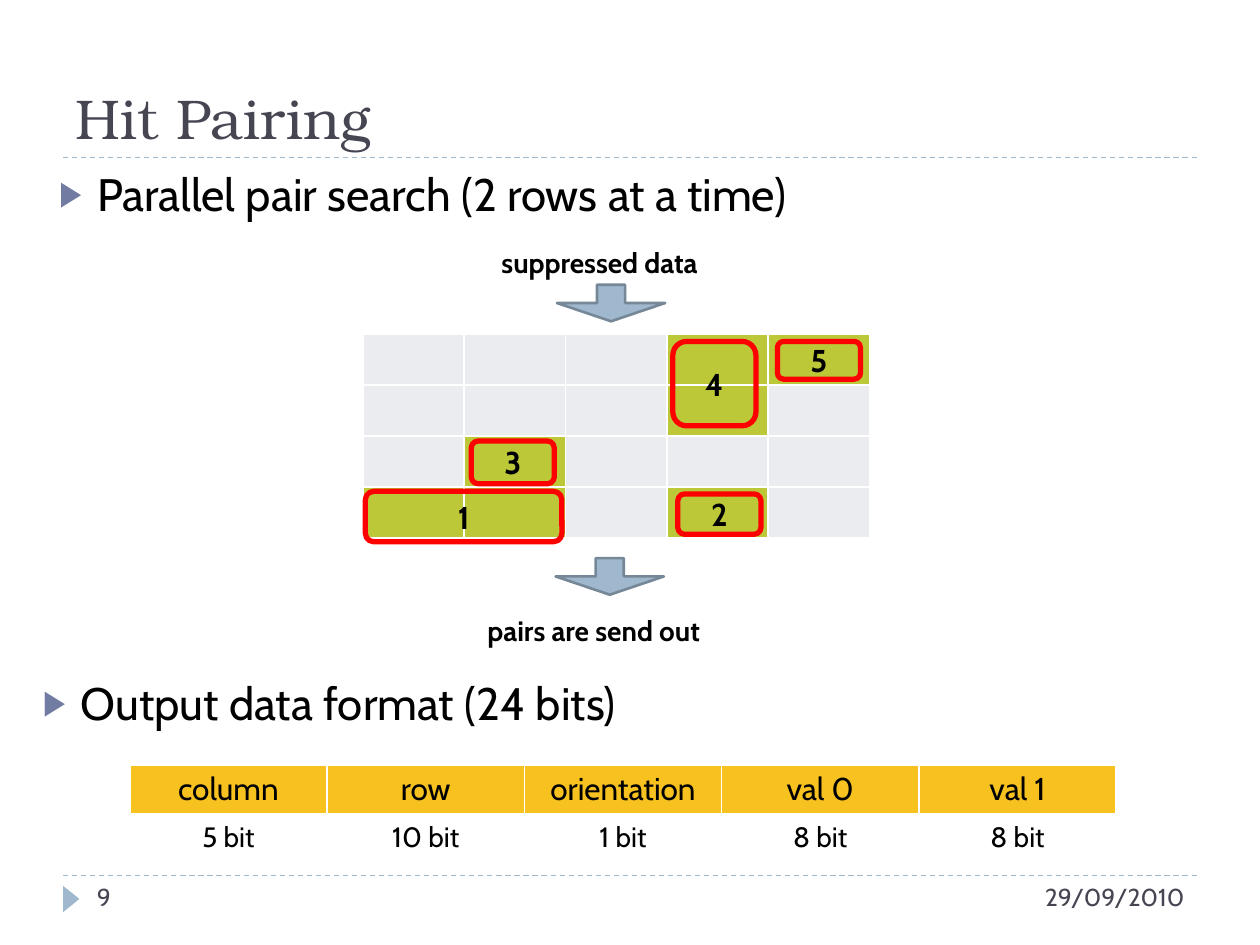
from dataclasses import dataclass

from lxml import etree
from pptx import Presentation
from pptx.dml.color import RGBColor
from pptx.enum.dml import MSO_LINE
from pptx.enum.shapes import MSO_CONNECTOR, MSO_SHAPE
from pptx.enum.text import MSO_ANCHOR, MSO_AUTO_SIZE, PP_ALIGN
from pptx.oxml.ns import qn
from pptx.util import Pt

DASH = MSO_LINE.DASH
STRAIGHT = MSO_CONNECTOR.STRAIGHT
DOWN_ARROW = MSO_SHAPE.DOWN_ARROW
ROUNDED = MSO_SHAPE.ROUNDED_RECTANGLE
TRIANGLE = MSO_SHAPE.ISOSCELES_TRIANGLE
TOP, MIDDLE, BOTTOM = MSO_ANCHOR.TOP, MSO_ANCHOR.MIDDLE, MSO_ANCHOR.BOTTOM
LEFT, CENTER, RIGHT = PP_ALIGN.LEFT, PP_ALIGN.CENTER, PP_ALIGN.RIGHT
NO_AUTOFIT = MSO_AUTO_SIZE.NONE
EMU_PER_PX = 9144


@dataclass(frozen=True)
class Theme:
    """Colours, fonts and type sizes of the slide."""
    heading_font: str = "TeX Gyre Bonum"
    body_font: str = "Cabin"
    ink: str = "000000"
    muted: str = "464653"
    accent: str = "9FB8CD"
    accent_edge: str = "768898"
    bullet: str = "727CA3"
    mark: str = "FF0000"
    hit: str = "BCC838"
    empty: str = "EBECF0"
    header: str = "F7C120"
    paper: str = "FFFFFF"
    title_size: int = 32
    bullet_size: int = 26
    label_size: int = 18
    caption_size: int = 16
    footer_size: int = 14


THEME = Theme()


def px(value):
    """Turn pixels into EMU."""
    return round(value * EMU_PER_PX)


def place(shape, box):
    """Move a shape to a box of left, top, width and height."""
    shape.left, shape.top, shape.width, shape.height = map(px, box)


def write_text(frame, text, size, font=THEME.body_font, color=THEME.ink, bold=False,
               align=LEFT, anchor=TOP, bullet=None, insets=(10, 5)):
    """Write one formatted paragraph into a text frame."""
    frame.word_wrap, frame.auto_size, frame.vertical_anchor = True, NO_AUTOFIT, anchor
    frame.margin_left = frame.margin_right = px(insets[0])
    frame.margin_top = frame.margin_bottom = px(insets[1])
    paragraph = frame.paragraphs[0]
    paragraph.alignment, paragraph.space_before = align, Pt(0)
    if bullet:
        add_bullet(paragraph, bullet)
    run = paragraph.add_run()
    run.text = text
    run.font.name, run.font.size, run.font.bold = font, Pt(size), bold
    run.font.color.rgb = RGBColor.from_string(color)


def add_bullet(paragraph, character):
    """Give a paragraph a hanging coloured bullet."""
    properties = paragraph._p.get_or_add_pPr()
    properties.set("marL", str(px(30)))
    properties.set("indent", str(px(-30)))
    color = etree.SubElement(properties, qn("a:buClr"))
    etree.SubElement(color, qn("a:srgbClr"), val=THEME.bullet)
    etree.SubElement(properties, qn("a:buSzPct"), val="76000")
    etree.SubElement(properties, qn("a:buChar"), char=character)


def add_text(slide, box, text, size, **style):
    """Add a text box."""
    write_text(slide.shapes.add_textbox(*map(px, box)).text_frame, text, size, **style)


def add_shape(slide, kind, box, fill=None, line=None, weight=0):
    """Add a flat preset shape."""
    shape = slide.shapes.add_shape(kind, *map(px, box))
    shape.shadow.inherit = False
    if fill:
        shape.fill.solid()
        shape.fill.fore_color.rgb = RGBColor.from_string(fill)
    else:
        shape.fill.background()
    if line:
        shape.line.color.rgb = RGBColor.from_string(line)
        shape.line.width = Pt(weight)
    else:
        shape.line.fill.background()
    return shape


def add_rule(slide, left, top, width):
    """Add a dashed horizontal rule."""
    rule = slide.shapes.add_connector(STRAIGHT, px(left), px(top), px(left + width), px(top))
    rule.line.color.rgb = RGBColor.from_string(THEME.accent)
    rule.line.width, rule.line.dash_style = Pt(0.75), DASH
    etree.SubElement(rule._element.spPr, qn("a:effectLst"))


def style_cell(cell, fill):
    """Give a cell white borders, a fill and tight margins."""
    properties = cell._tc.get_or_add_tcPr()
    for side in ("lnL", "lnR", "lnT", "lnB"):
        border = etree.SubElement(properties, qn(f"a:{side}"), w=str(Pt(1)))
        paint = etree.SubElement(border, qn("a:solidFill"))
        etree.SubElement(paint, qn("a:srgbClr"), val=THEME.paper)
    cell.fill.solid()
    cell.fill.fore_color.rgb = RGBColor.from_string(fill)
    cell.margin_top = cell.margin_bottom = px(2)
    cell.vertical_anchor = MIDDLE


def add_plain_table(slide, box, rows, columns):
    """Add a table with equal rows and columns and no banding."""
    table = slide.shapes.add_table(rows, columns, *map(px, box)).table
    table.first_row = table.horz_banding = False
    for row in table.rows:
        row.height = px(box[3] / rows)
    for column in table.columns:
        column.width = px(box[2] / columns)
    return table


def add_title(slide, box):
    """Fill the title placeholder and rule it off."""
    left, top, width, height = box
    place(slide.shapes.title, box)
    write_text(slide.shapes.title.text_frame, "Hit Pairing", THEME.title_size,
               font=THEME.heading_font, color=THEME.muted, anchor=BOTTOM)
    add_rule(slide, left, top + height, width)


def add_point(placeholder, box, text):
    """Fill a body placeholder with one bulleted line."""
    place(placeholder, box)
    write_text(placeholder.text_frame, text, THEME.bullet_size, bullet="▶")


def add_arrow(slide, left, top):
    """Add a wide arrow pointing down."""
    arrow = add_shape(slide, DOWN_ARROW, (left, top, 86, 29), THEME.accent,
                      THEME.accent_edge, 1.5)
    arrow.adjustments[0], arrow.adjustments[1] = 0.26, 0.5


def add_hit_grid(slide, box):
    """Draw the hit grid with its numbered pairs, arrows and captions."""
    left, top, width, height = box
    pattern = ("...##", "...#.", ".#...", "##.#.")
    table = add_plain_table(slide, box, len(pattern), len(pattern[0]))
    for row, line in enumerate(pattern):
        for column, sign in enumerate(line):
            style_cell(table.cell(row, column), THEME.hit if sign == "#" else THEME.empty)
    pairs = {"1": (2, 125, 156, 40), "3": (86, 85, 66, 34), "2": (250, 127, 66, 32),
             "4": (246, 6, 66, 67), "5": (329, 6, 66, 30)}
    for number, (across, down, pair_width, pair_height) in pairs.items():
        pair = add_shape(slide, ROUNDED, (left + across, top + down, pair_width, pair_height),
                         line=THEME.mark, weight=3)
        write_text(pair.text_frame, number, THEME.label_size, bold=True, align=CENTER,
                   anchor=MIDDLE, insets=(0, 0))
    add_arrow(slide, left + 154, top - 39)
    add_arrow(slide, left + 153, top + height + 16)
    add_text(slide, (left + 90, top - 75, 238, 37), "suppressed data",
             THEME.caption_size, bold=True, insets=(20, 5))
    add_text(slide, (left + 89, top + height + 55, 238, 37), "pairs are send out",
             THEME.caption_size, bold=True)


def add_format_table(slide, box):
    """Tabulate the output fields and their widths."""
    lines = ((("column", "row", "orientation", "val 0", "val 1"),
              THEME.label_size, THEME.header),
             (("5 bit", "10 bit", "1 bit", "8 bit", "8 bit"),
              THEME.caption_size, THEME.paper))
    table = add_plain_table(slide, box, len(lines), len(lines[0][0]))
    for row, (texts, size, fill) in enumerate(lines):
        for column, text in enumerate(texts):
            cell = table.cell(row, column)
            write_text(cell.text_frame, text, size, align=CENTER)
            style_cell(cell, fill)


def add_footer(slide, box):
    """Add the footer rule, marker, slide number and date."""
    left, top, width, height = box
    add_rule(slide, left, top, width)
    add_shape(slide, TRIANGLE, (left - 4, top + 12, 21, 13), THEME.accent).rotation = 90
    style = {"size": THEME.footer_size, "color": THEME.muted}
    add_text(slide, (left + 17, top, 217, height), "9", **style)
    add_text(slide, (left + width - 250, top, 250, height), "29/09/2010", align=RIGHT, **style)


def main():
    """Build and save the presentation."""
    presentation = Presentation()
    presentation.slide_width, presentation.slide_height = px(1000), px(750)
    slide = presentation.slides.add_slide(presentation.slide_layouts[3])
    add_title(slide, (50, 17, 900, 108))
    add_point(slide.placeholders[1], (37, 127, 900, 58), "Parallel pair search (2 rows at a time)")
    add_hit_grid(slide, (288, 265, 402, 162))
    add_point(slide.placeholders[2], (24, 531, 900, 58), "Output data format (24 bits)")
    add_format_table(slide, (103, 607, 783, 77))
    add_footer(slide, (50, 695, 900, 40))
    presentation.save("out.pptx")


if __name__ == "__main__":
    main()
